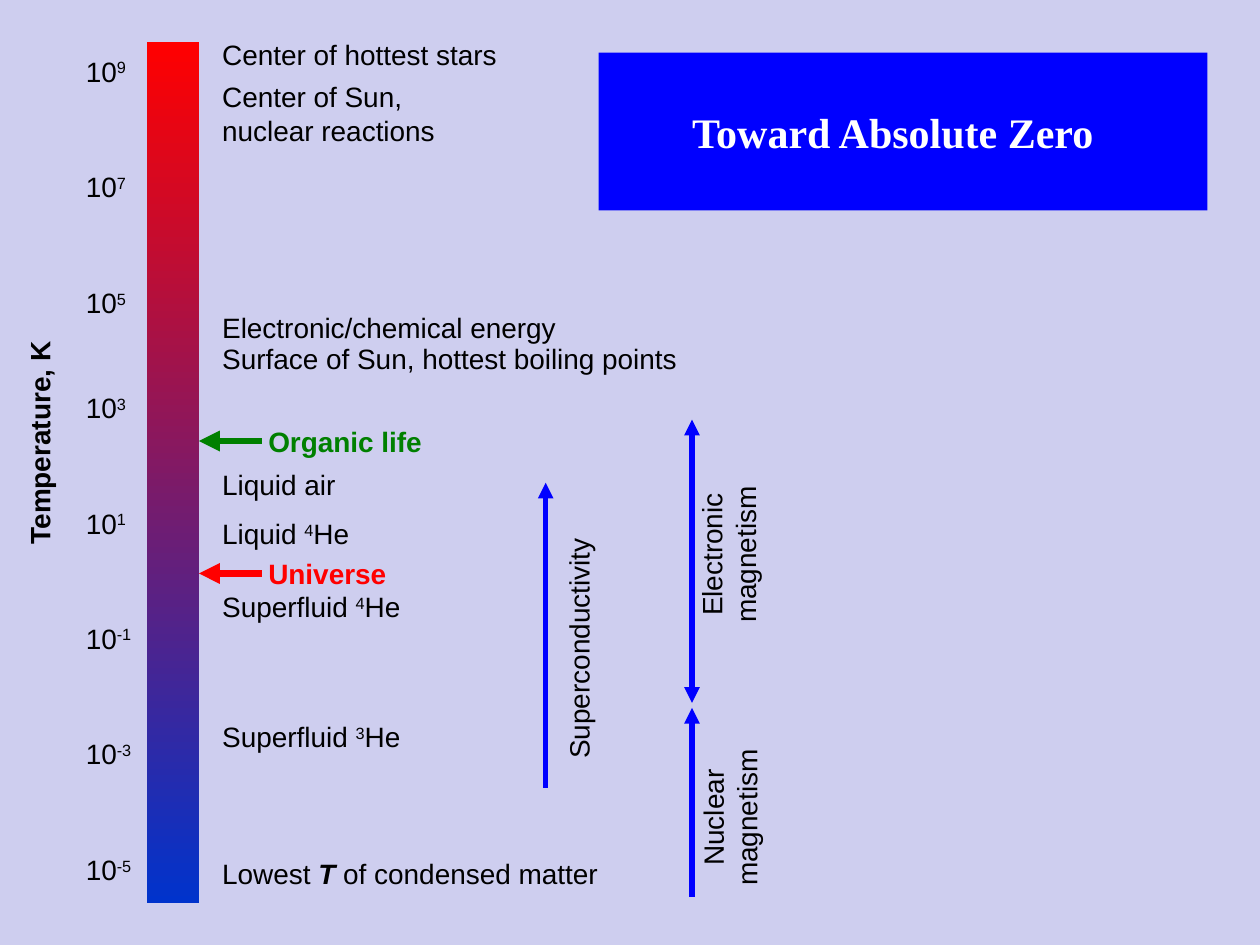
from lxml import etree
from pptx import Presentation
from pptx.dml.color import RGBColor
from pptx.enum.shapes import MSO_CONNECTOR, MSO_SHAPE
from pptx.enum.text import MSO_ANCHOR, MSO_AUTO_SIZE, PP_ALIGN
from pptx.oxml.ns import qn
from pptx.util import Cm, Pt

STRAIGHT = MSO_CONNECTOR.STRAIGHT
RECTANGLE = MSO_SHAPE.RECTANGLE
MIDDLE = MSO_ANCHOR.MIDDLE
GROW = MSO_AUTO_SIZE.SHAPE_TO_FIT_TEXT
LEFT, CENTER = PP_ALIGN.LEFT, PP_ALIGN.CENTER

LAVENDER = RGBColor(0xCE, 0xCE, 0xEF)
BLACK = RGBColor(0, 0, 0)
WHITE = RGBColor(0xFF, 0xFF, 0xFF)
BLUE = RGBColor(0, 0, 0xFF)
COLD_BLUE = RGBColor(0, 0x33, 0xCC)
RED = RGBColor(0xFF, 0, 0)
GREEN = RGBColor(0, 0x80, 0)

TITLE = "Toward Absolute Zero"
TITLE_ONLY_LAYOUT = 5
SUPER, STRONG_ITALIC = "super", "strong italic"

POWERS = [
    ("9", 0.97), ("7", 3.3), ("5", 5.63), ("3", 7.75),
    ("1", 10.08), ("-1", 12.4), ("-3", 14.73), ("-5", 17.07),
]
POWER_LEFT = 1.48

LABEL_LEFT, MARKER_LEFT = 4.23, 5.16
LABELS = [
    (0.64, 6.07, [["Center of hottest stars"]]),
    (1.48, 4.8, [["Center of Sun,"], ["nuclear reactions"]]),
    (6.14, 7.24, [["Electronic/chemical energy"]]),
    (6.77, 9.7, [["Surface of Sun, hottest boiling points"]]),
    (9.31, 2.79, [["Liquid air"]]),
    (10.29, 3.1, [["Liquid ", ("4", SUPER), "He"]]),
    (11.77, 4.14, [["Superfluid ", ("4", SUPER), "He"]]),
    (14.39, 4.14, [["Superfluid ", ("3", SUPER), "He"]]),
    (17.15, 8.1, [["Lowest ", ("T", STRONG_ITALIC), " of condensed matter"]]),
]
MARKERS = [
    ("Organic life", 8.43, 3.63, 8.89, GREEN),
    ("Universe", 11.09, 2.9, 11.56, RED),
]
VERTICAL_LABELS = [
    (0.8, 8.9, 4.65, [["Temperature, K"]], True),
    (11.67, 13.07, 4.95, [["Superconductivity"]], False),
    (14.69, 11.18, 3.28, [["Electronic"], ["magnetism"]], False),
    (14.72, 16.48, 3.28, [["Nuclear"], ["magnetism"]], False),
]
RANGES = [
    (11, 15.88, 9.73, False),
    (13.95, 18.08, 14.27, False),
    (13.95, 8.46, 14.17, True),
]


def write(frame, lines, font="Arial", size=16, color=BLACK, bold=False, align=LEFT):
    for index, line in enumerate(lines):
        para = frame.paragraphs[0] if index == 0 else frame.add_paragraph()
        para.alignment = align
        for span in line:
            text, style = (span, None) if isinstance(span, str) else span
            run = para.add_run()
            run.text = text
            run.font.name = font
            run.font.size = Pt(size)
            run.font.color.rgb = color
            run.font.bold = bold or style == STRONG_ITALIC
            run.font.italic = style == STRONG_ITALIC
            if style == SUPER:
                run._r.get_or_add_rPr().set("baseline", "30000")


def label_height(lines):
    return 0.94 + 0.69 * (len(lines) - 1)


def add_label(page, left, top, width, lines, rotation=0, **format):
    box = page.shapes.add_textbox(Cm(left), Cm(top), Cm(width), Cm(label_height(lines)))
    box.rotation = rotation
    box.text_frame.word_wrap = False
    box.text_frame.auto_size = GROW
    write(box.text_frame, lines, **format)


def add_vertical_label(page, center_x, center_y, width, lines, bold):
    left, top = center_x - width / 2, center_y - label_height(lines) / 2
    align = CENTER if len(lines) > 1 else LEFT
    add_label(page, left, top, width, lines, rotation=270, bold=bold, align=align)


def add_arrow(page, start, end, color, weight, double=False):
    arrow = page.shapes.add_connector(STRAIGHT, *map(Cm, start + end))
    arrow.line.color.rgb = color
    arrow.line.width = Pt(weight)
    properties = arrow._element.spPr
    outline = properties.find(qn("a:ln"))
    for tip in ("a:headEnd", "a:tailEnd") if double else ("a:tailEnd",):
        etree.SubElement(outline, qn(tip), type="triangle")
    etree.SubElement(properties, qn("a:effectLst"))


def add_title(page):
    title = page.shapes.title
    title.left, title.top, title.width, title.height = map(Cm, (12.07, 1.06, 12.27, 3.18))
    title.fill.solid()
    title.fill.fore_color.rgb = BLUE
    title.text_frame.vertical_anchor = MIDDLE
    title.text_frame.margin_right = Cm(0.67)
    write(title.text_frame, [[TITLE]], font="Times New Roman", size=24,
          color=WHITE, bold=True, align=CENTER)


def add_temperature_bar(page):
    bar = page.shapes.add_shape(RECTANGLE, *map(Cm, (2.96, 0.85, 1.06, 17.36)))
    bar.shadow.inherit = False
    bar.line.fill.background()
    bar.fill.gradient()
    bar.fill.gradient_angle = 270
    for stop, color in zip(bar.fill.gradient_stops, (RED, COLD_BLUE)):
        stop.color.rgb = color


def main():
    deck = Presentation()
    deck.slide_width, deck.slide_height = Cm(25.4), Cm(19.05)
    page = deck.slides.add_slide(deck.slide_layouts[TITLE_ONLY_LAYOUT])
    page.background.fill.solid()
    page.background.fill.fore_color.rgb = LAVENDER

    add_title(page)
    add_temperature_bar(page)
    for exponent, top in POWERS:
        width = 1.35 if len(exponent) == 1 else 1.48
        add_label(page, POWER_LEFT, top, width, [["10", (exponent, SUPER)]])
    for top, width, lines in LABELS:
        add_label(page, LABEL_LEFT, top, width, lines)
    for text, top, width, level, color in MARKERS:
        add_label(page, MARKER_LEFT, top, width, [[text]], color=color, bold=True)
        add_arrow(page, (5.28, level), (4.01, level), color, 4)
    for label in VERTICAL_LABELS:
        add_vertical_label(page, *label)
    for x, start, end, double in RANGES:
        add_arrow(page, (x, start), (x, end), BLUE, 3, double)
    deck.save("out.pptx")


if __name__ == "__main__":
    main()
